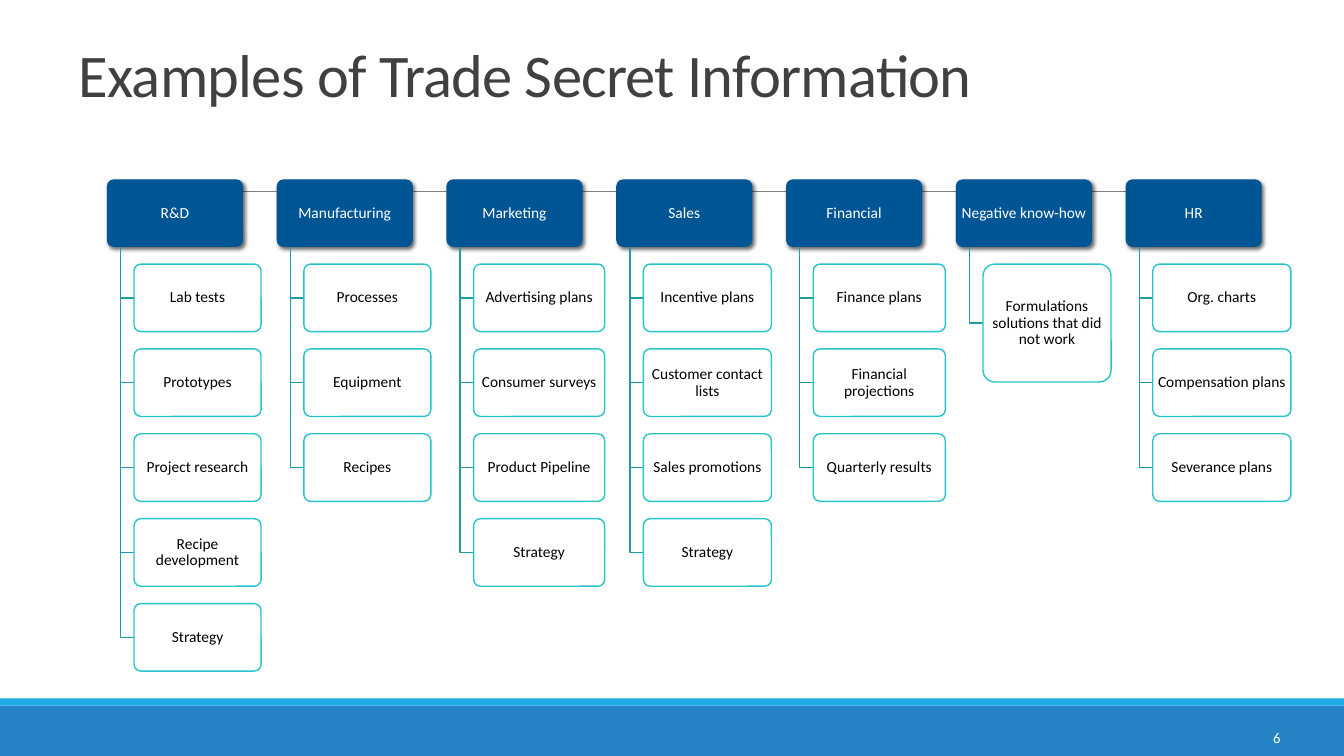
from lxml import etree
from pptx import Presentation
from pptx.dml.color import RGBColor
from pptx.enum.shapes import MSO_CONNECTOR, MSO_SHAPE
from pptx.enum.text import MSO_ANCHOR, MSO_AUTO_SIZE, PP_ALIGN
from pptx.oxml.ns import qn
from pptx.util import Inches, Pt

RECT, ROUND = MSO_SHAPE.RECTANGLE, MSO_SHAPE.ROUNDED_RECTANGLE
STRAIGHT = MSO_CONNECTOR.STRAIGHT
MIDDLE, BOTTOM = MSO_ANCHOR.MIDDLE, MSO_ANCHOR.BOTTOM
LEFT, CENTER, RIGHT = PP_ALIGN.LEFT, PP_ALIGN.CENTER, PP_ALIGN.RIGHT
FIXED = MSO_AUTO_SIZE.NONE
FONT = "Calibri"
COLORS = {
    "band": "2683C6", "stripe": "1CADE4", "rule": "808080",
    "head": "005595", "link": "209DA3", "edge": "28C4CC",
    "title": "404040", "white": "FFFFFF", "black": "000000",
}
HEAD_W, BOX_H, GAP, PITCH = 1.35, 0.67, 0.17, 1.684
COLUMNS = [
    ("R&D", 1.26, BOX_H, ["Lab tests", "Prototypes", "Project research",
                          "Recipe development", "Strategy"]),
    ("Manufacturing", 1.26, BOX_H, ["Processes", "Equipment", "Recipes"]),
    ("Marketing", 1.3, BOX_H, ["Advertising plans", "Consumer surveys",
                               "Product Pipeline", "Strategy"]),
    ("Sales", 1.27, BOX_H, ["Incentive plans", "Customer contact lists",
                            "Sales promotions", "Strategy"]),
    ("Financial", 1.31, BOX_H, ["Finance plans", "Financial projections",
                                "Quarterly results"]),
    ("Negative know-how", 1.27, 1.17,
     ["Formulations solutions that did not work"]),
    ("HR", 1.37, BOX_H, ["Org. charts", "Compensation plans",
                         "Severance plans"]),
]


def color(name):
    """Return the named colour."""
    return RGBColor.from_string(COLORS[name])


def write(frame, text, size, ink, align=CENTER, anchor=MIDDLE):
    """Write one line of text into a frame and return its run."""
    frame.word_wrap = True
    frame.auto_size = FIXED
    frame.vertical_anchor = anchor
    para = frame.paragraphs[0]
    para.alignment = align
    para.line_spacing = 0.9
    run = para.add_run()
    run.text = text
    run.font.name = FONT
    run.font.size = Pt(size)
    run.font.color.rgb = color(ink)
    return run


def block(slide, kind, box, fill, edge=None):
    """Draw a filled shape in the given box."""
    shape = slide.shapes.add_shape(kind, *map(Inches, box))
    shape.shadow.inherit = False
    shape.fill.solid()
    shape.fill.fore_color.rgb = color(fill)
    if edge:
        shape.line.color.rgb = color(edge)
        shape.line.width = Pt(1)
    else:
        shape.line.fill.background()
    return shape


def card(slide, box, text, fill, ink, edge=None):
    """Draw a rounded box with centred text."""
    shape = block(slide, ROUND, box, fill, edge)
    shape.adjustments[0] = 0.1
    frame = shape.text_frame
    frame.margin_left = frame.margin_right = Inches(0.02)
    frame.margin_top = frame.margin_bottom = Inches(0.02)
    write(frame, text, 11, ink)
    return shape


def cast(shape):
    """Give a shape a soft shadow to the lower right."""
    effects = shape._element.spPr.find(qn("a:effectLst"))
    outer = etree.SubElement(effects, qn("a:outerShdw"), blurRad=str(Pt(3)),
                             dist=str(Pt(2)), dir="2700000", rotWithShape="0")
    tint = etree.SubElement(outer, qn("a:srgbClr"), val=COLORS["black"])
    etree.SubElement(tint, qn("a:alpha"), val="60000")


def fade(shape):
    """Make the fill of a shape 90 percent opaque."""
    tint = shape._element.spPr.find(qn("a:solidFill"))[0]
    etree.SubElement(tint, qn("a:alpha"), val="90000")


def link(slide, x, top, right, mid):
    """Draw an elbow down from a heading and across to an item."""
    pen = slide.shapes.build_freeform(Inches(x), Inches(top))
    pen.add_line_segments([(Inches(x), Inches(mid)),
                           (Inches(right), Inches(mid))], close=False)
    elbow = pen.convert_to_shape()
    elbow.shadow.inherit = False
    elbow.fill.background()
    elbow.line.color.rgb = color("link")
    elbow.line.width = Pt(1)


def column(slide, x, y, head, width, height, items):
    """Draw a heading with its items hanging below."""
    cast(card(slide, (x, y, HEAD_W, BOX_H), head, "head", "white"))
    base = y + BOX_H
    left = x + 0.2 * HEAD_W
    for row, item in enumerate(items):
        top = base + GAP + row * (height + GAP + 0.002)
        link(slide, x + 0.1 * HEAD_W, base, left, top + height / 2)
        fade(card(slide, (left, top, width, height), item,
                  "white", "black", "edge"))


def chart(slide, x, y):
    """Draw the rule and the row of columns from the given corner."""
    rule = slide.shapes.add_connector(
        STRAIGHT, Inches(x + 0.25), Inches(y + 0.12),
        Inches(x + 11.15), Inches(y + 0.12))
    rule.line.color.rgb = color("rule")
    rule.line.width = Pt(0.5)
    etree.SubElement(rule._element.spPr, qn("a:effectLst"))
    for index, group in enumerate(COLUMNS):
        column(slide, x + index * PITCH, y, *group)


def title(slide, box):
    """Place and format the title."""
    holder = slide.shapes.title
    holder.left, holder.top, holder.width, holder.height = map(Inches, box)
    run = write(holder.text_frame, "Examples of Trade Secret Information",
                43.2, "title", LEFT, BOTTOM)
    holder.text_frame.paragraphs[0].line_spacing = 0.85
    run._r.get_or_add_rPr().set("spc", "-50")


def footer(slide, y, width, height):
    """Draw the bottom bands and the slide number."""
    block(slide, RECT, (0, y + 0.07, width, height - 0.07), "band")
    block(slide, RECT, (0, y, width, 0.07), "stripe")
    box = slide.shapes.add_textbox(Inches(width - 3.64), Inches(y + 0.2),
                                   Inches(3.11), Inches(0.4))
    write(box.text_frame, "6", 10.5, "white", RIGHT)


def main():
    """Build and save the slide."""
    deck = Presentation()
    deck.slide_width, deck.slide_height = Inches(13.33), Inches(7.5)
    slide = deck.slides.add_slide(deck.slide_layouts[5])
    footer(slide, 6.93, 13.33, 0.57)
    chart(slide, 1.06, 1.78)
    title(slide, (0.68, 0.58, 11.55, 0.56))
    deck.save("out.pptx")


if __name__ == "__main__":
    main()
